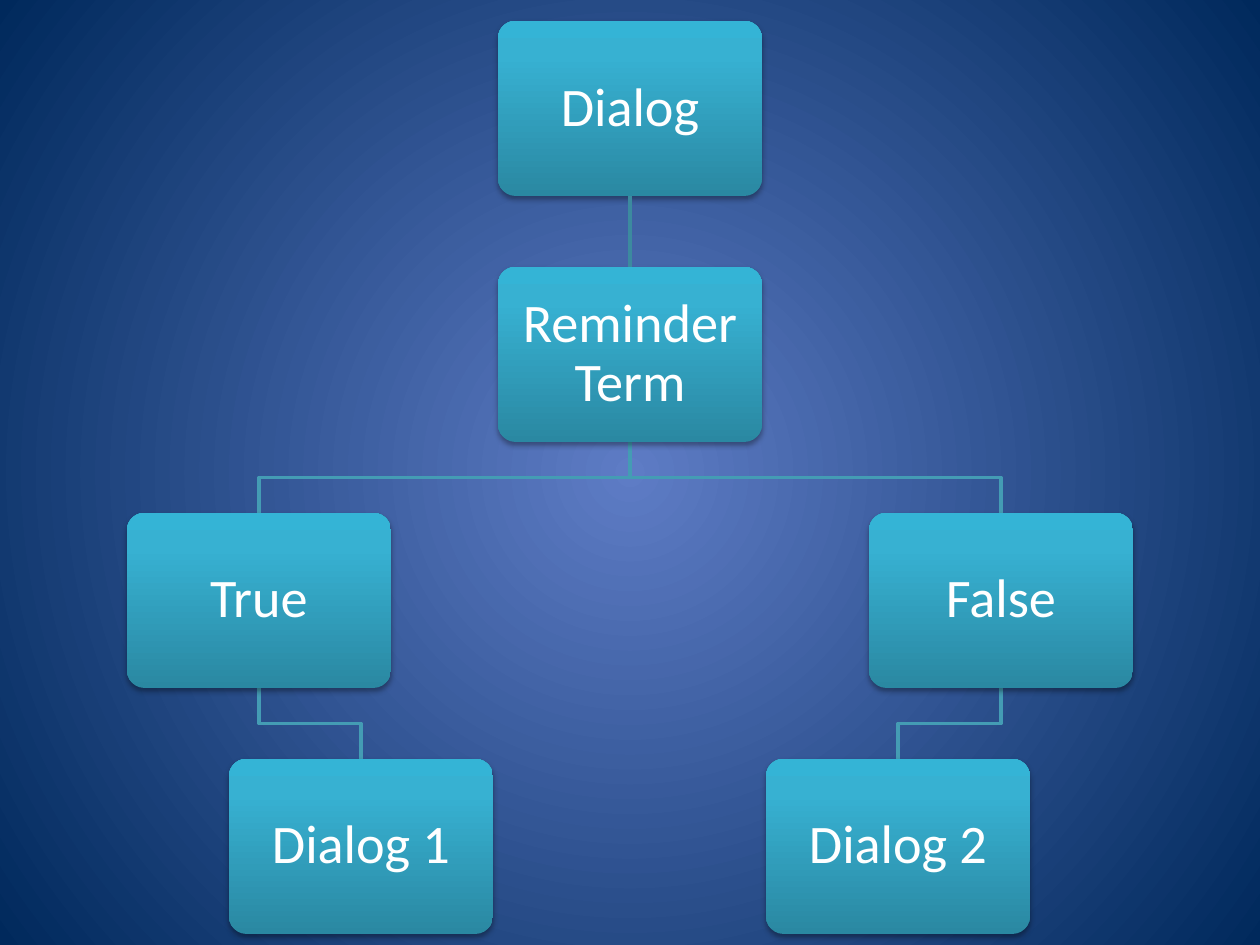
from lxml.etree import SubElement
from pptx import Presentation
from pptx.dml.color import RGBColor
from pptx.enum.shapes import MSO_CONNECTOR, MSO_SHAPE
from pptx.enum.text import MSO_ANCHOR, PP_ALIGN
from pptx.oxml import parse_xml
from pptx.oxml.ns import nsdecls, qn
from pptx.util import Emu, Pt

BOX_W, BOX_H = 264, 175
TOP, ROW_STEP = 21, 246
BOX_STOPS = [(0, "2A88A2"), (80, "37B1D2"), (100, "34B4D6")]
BOX_DIRECTION = '<a:lin ang="16200000" scaled="0"/>'
BG_STOPS = [(0, "5E7CC5"), (100, "00295C")]
BG_DIRECTION = ('<a:path path="circle"><a:fillToRect l="50000" t="50000" '
                'r="50000" b="50000"/></a:path>')
NODES = {
    "Dialog": (630, 0),
    "Reminder Term": (630, 1),
    "True": (259, 2),
    "Dialog 1": (361, 3),
    "False": (1001, 2),
    "Dialog 2": (898, 3),
}
BRANCHES = [("Reminder Term", "True"), ("True", "Dialog 1"),
            ("Reminder Term", "False"), ("False", "Dialog 2")]


def px(n):
    return Emu(round(n * 914400 / 126))


def color(value):
    return RGBColor.from_string(value)


def replace_fill(parent, stops, direction):
    gs = "".join(f'<a:gs pos="{pos * 1000}"><a:srgbClr val="{value}"/></a:gs>'
                 for pos, value in stops)
    grad = parse_xml(f'<a:gradFill {nsdecls("a")} rotWithShape="1">'
                     f'<a:gsLst>{gs}</a:gsLst>{direction}</a:gradFill>')
    parent.replace(parent.find(qn("a:solidFill")), grad)


def set_background(s):
    s.background.fill.solid()
    replace_fill(s.element.cSld.bg.bgPr, BG_STOPS, BG_DIRECTION)


def add_shadow(sp):
    sp.shadow.inherit = False
    effects = sp.element.spPr.find(qn("a:effectLst"))
    effects.append(parse_xml(
        f'<a:outerShdw {nsdecls("a")} blurRad="40000" dist="23000" dir="5400000" '
        'rotWithShape="0"><a:srgbClr val="000000"><a:alpha val="35000"/>'
        '</a:srgbClr></a:outerShdw>'))


def set_text(sp, text, size=31, font="Calibri", fill="FFFFFF", inset=10):
    tf = sp.text_frame
    tf.word_wrap = True
    tf.vertical_anchor = MSO_ANCHOR.MIDDLE
    tf.margin_left = tf.margin_right = px(inset)
    tf.margin_top = tf.margin_bottom = px(inset)
    p = tf.paragraphs[0]
    p.alignment = PP_ALIGN.CENTER
    p.line_spacing = 0.9
    r = p.add_run()
    r.text = text
    r.font.size = Pt(size)
    r.font.name = font
    r.font.color.rgb = color(fill)


def add_node(s, text, center, row):
    sp = s.shapes.add_shape(MSO_SHAPE.ROUNDED_RECTANGLE,
                            px(center - BOX_W / 2), px(TOP + row * ROW_STEP),
                            px(BOX_W), px(BOX_H))
    sp.adjustments[0] = 0.1
    sp.fill.solid()
    replace_fill(sp.element.spPr, BOX_STOPS, BOX_DIRECTION)
    sp.line.fill.background()
    add_shadow(sp)
    set_text(sp, text)
    return sp


def style_line(line, value):
    line.color.rgb = color(value)
    line.width = Pt(2)


def add_link(s, parent, child):
    link = s.shapes.add_connector(MSO_CONNECTOR.STRAIGHT, 0, 0, 0, 0)
    link.begin_connect(parent, 2)
    link.end_connect(child, 0)
    style_line(link.line, "3C8A9F")
    SubElement(link.element.spPr, qn("a:effectLst"))


def add_branch(s, parent, child):
    x1, row = NODES[parent]
    x2, child_row = NODES[child]
    y1 = TOP + row * ROW_STEP + BOX_H
    y2 = TOP + child_row * ROW_STEP
    middle = (y1 + y2) / 2
    builder = s.shapes.build_freeform(px(x1), px(y1))
    points = [(x1, middle), (x2, middle), (x2, y2)]
    builder.add_line_segments([(px(x), px(y)) for x, y in points], close=False)
    sp = builder.convert_to_shape()
    sp.fill.background()
    sp.shadow.inherit = False
    style_line(sp.line, "449CB4")


def main():
    prs = Presentation()
    prs.slide_width, prs.slide_height = px(1260), px(945)
    s = prs.slides.add_slide(prs.slide_layouts[6])
    set_background(s)
    for parent, child in BRANCHES:
        add_branch(s, parent, child)
    boxes = {text: add_node(s, text, *place) for text, place in NODES.items()}
    add_link(s, boxes["Dialog"], boxes["Reminder Term"])
    prs.save("out.pptx")


if __name__ == "__main__":
    main()
